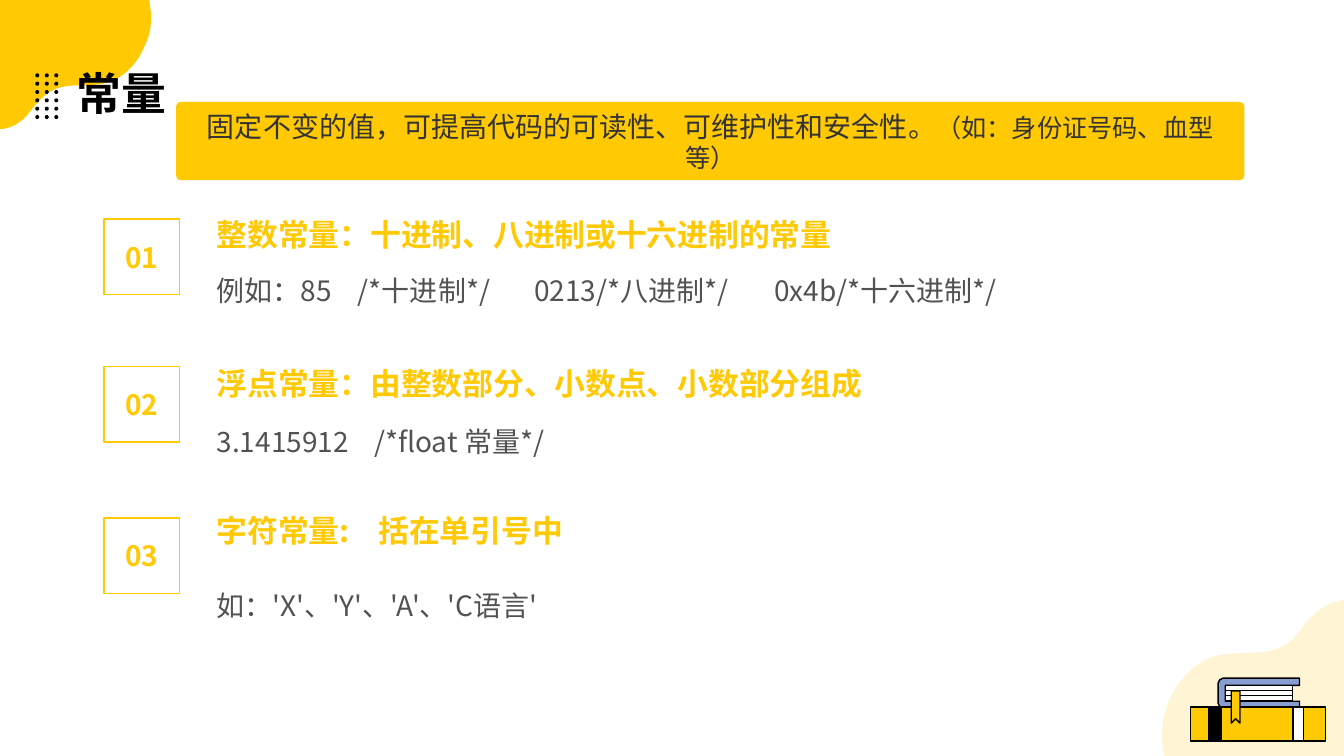
from math import cos, pi, sin

from lxml import etree
from pptx import Presentation
from pptx.dml.color import RGBColor
from pptx.enum.shapes import MSO_SHAPE as Preset
from pptx.enum.text import MSO_ANCHOR as Anchor, PP_ALIGN as Align
from pptx.oxml.ns import qn
from pptx.util import Cm, Pt

FONT = "Noto Sans CJK SC"
YELLOW, BLACK, WHITE = "FFC904", "000000", "FFFFFF"
BLUE, GREY, DARK = "889DD2", "525252", "333333"

presentation = Presentation()
presentation.slide_width, presentation.slide_height = Cm(33.87), Cm(19.05)
slide = presentation.slides.add_slide(presentation.slide_layouts[6])


def draw(box=None, contours=(), preset=Preset.RECTANGLE, fill=None, line=None, alpha=None):
    if contours:
        builder = slide.shapes.build_freeform(*[Cm(length) for length in contours[0][0]])
        for index, contour in enumerate(contours):
            corners = [(Cm(x), Cm(y)) for x, y in contour]
            if index:
                builder.move_to(*corners[0])
            builder.add_line_segments(corners[1:], close=True)
        shape = builder.convert_to_shape()
    else:
        shape = slide.shapes.add_shape(preset, *[Cm(length) for length in box])
    shape.shadow.inherit = False
    for part, color in ((shape.fill, fill), (shape.line.fill, line)):
        if color:
            part.solid()
            part.fore_color.rgb = RGBColor.from_string(color)
        else:
            part.background()
    if line:
        shape.line.width = Pt(1)
    if alpha:
        color_element = shape.fill._xPr.find(qn("a:solidFill"))[0]
        etree.SubElement(color_element, qn("a:alpha"), val=str(alpha * 1000))
    return shape


def write(text, size, color, box=None, shape=None, bold=False, align=Align.JUSTIFY,
          anchor=Anchor.MIDDLE, spacing=None, tabs=(), inset=0, wrap=True, tail="", tail_size=None):
    shape = shape or slide.shapes.add_textbox(*[Cm(length) for length in box])
    frame = shape.text_frame
    frame.word_wrap, frame.vertical_anchor = wrap, anchor
    frame.margin_left = frame.margin_right = Cm(inset)
    frame.margin_top = frame.margin_bottom = Cm(inset / 2)
    paragraph = frame.paragraphs[0]
    paragraph.alignment = align
    if spacing:
        paragraph.line_spacing = spacing
    if tabs:
        tab_list = etree.SubElement(paragraph._p.get_or_add_pPr(), qn("a:tabLst"))
        for position in tabs:
            etree.SubElement(tab_list, qn("a:tab"), pos=str(Cm(position)), algn="l")
    for words, points in ((text, size), (tail, tail_size)):
        if words:
            run = paragraph.add_run()
            run.text = words
            run.font.name, run.font.size, run.font.bold = FONT, Pt(points), bold
            run.font.color.rgb = RGBColor.from_string(color)
            etree.SubElement(run._r.get_or_add_rPr(), qn("a:ea"), typeface=FONT)


blobs = [
    ([(33.87, 15.11), (33.81, 15.14)],
     [((33.53, 15.16), (33.25, 15.34), (33.05, 15.54)),
      ((32.86, 15.72), (32.74, 15.95), (32.56, 16.13)),
      ((32.03, 16.59), (31.34, 16.38), (30.73, 16.51)),
      ((30.23, 16.59), (29.74, 17.04), (29.49, 17.6)),
      ((29.29, 18.01), (29.26, 18.47), (29.31, 18.9))],
     [(29.34, 19.05), (33.87, 19.05)], 17),
    ([(0, 3.25), (0.05, 3.25)],
     [((0.28, 3.23), (0.51, 3.1), (0.69, 2.9)),
      ((0.81, 2.74), (0.94, 2.57), (1.09, 2.44)),
      ((1.52, 2.03), (2.08, 2.21), (2.59, 2.11)),
      ((3.02, 2.03), (3.43, 1.68), (3.63, 1.19)),
      ((3.81, 0.86), (3.84, 0.48), (3.78, 0.13))],
     [(3.76, 0), (0, 0)], None),
]
steps = 12
for outline, curves, corners, alpha in blobs:
    for curve in curves:
        controls = (outline[-1], *curve)
        for step in range(1, steps + 1):
            t = step / steps
            weights = ((1 - t) ** 3, 3 * t * (1 - t) ** 2, 3 * t * t * (1 - t), t ** 3)
            outline.append(tuple(sum(weight * control[axis] for weight, control in zip(weights, controls))
                                 for axis in (0, 1)))
    draw(contours=[outline + corners], fill=YELLOW, alpha=alpha)

cover = [(32.75, 17.09), (30.82, 17.09), (30.74, 17.13), (30.7, 17.21), (30.7, 17.73),
         (30.74, 17.8), (30.82, 17.84), (32.75, 17.84), (32.75, 17.67), (30.88, 17.67),
         (30.88, 17.27), (32.75, 17.27)]
draw(contours=[cover], fill=BLUE, line=BLACK)
for page in range(3):
    draw((30.88, 17.27 + page * 0.13, 1.69, 0.13), fill=WHITE, line=BLACK)
for left, width, color in ((30.01, 3.4, YELLOW), (32.59, 0.26, WHITE), (30.47, 0.32, BLACK)):
    draw((left, 17.82, width, 0.85), fill=color, line=BLACK)
bookmark = [(31.03, 17.41), (31.25, 17.41), (31.25, 18.22), (31.14, 18.11), (31.03, 18.22)]
draw(contours=[bookmark], fill=YELLOW, line=BLACK)

radius, sides = 0.05, 12
angles = [2 * pi * side / sides for side in range(sides)]
dots = [[(0.94 + column * 0.24 + radius * cos(angle), 1.9 + row * 0.21 + radius * sin(angle))
         for angle in angles] for row in range(6) for column in range(3)]
draw(contours=dots, fill=BLACK)

write("常量", 32, BLACK, box=(1.93, 0.99, 20.02, 2.01), bold=True, align=Align.LEFT, anchor=Anchor.BOTTOM)

constants = [
    ("整数常量：十进制、八进制或十六进制的常量", (),
     "例如：85\t/*十进制*/\t0213/*八进制*/\t0x4b/*十六进制*/", (3.56, 8, 14.05), 5.52, 5.31, 6.48),
    ("浮点常量：由整数部分、小数点、小数部分组成", (),
     "3.1415912\t/*float 常量*/", (3.97,), 9.23, 9.07, 10.27),
    ("字符常量:\t括在单引号中", (4.08,),
     "如：'X'、'Y'、'A'、'C语言'", (), 13.05, 12.78, 14.4),
]
for number, constant in enumerate(constants, 1):
    heading, heading_tabs, example, example_tabs, box_top, heading_top, example_top = constant
    write(example, 20, GREY, box=(5.46, example_top, 27.36, 2.08), anchor=Anchor.TOP,
          spacing=1.5, tabs=example_tabs)
    write(heading, 22, YELLOW, box=(5.46, heading_top, 26.95, 1.17), bold=True, tabs=heading_tabs)
    number_box = draw((2.62, box_top, 1.91, 1.91), line=YELLOW)
    write(f"{number:02}", 20, YELLOW, shape=number_box, bold=True, align=Align.CENTER, wrap=False)

banner = draw((4.44, 2.57, 26.92, 1.97), preset=Preset.ROUNDED_RECTANGLE, fill=YELLOW)
banner.adjustments[0] = 0.06
write("固定不变的值，可提高代码的可读性、可维护性和安全性。", 20, DARK, shape=banner, align=Align.CENTER,
      inset=0.25, tail="（如：身份证号码、血型等）", tail_size=18)

presentation.save("out.pptx")
